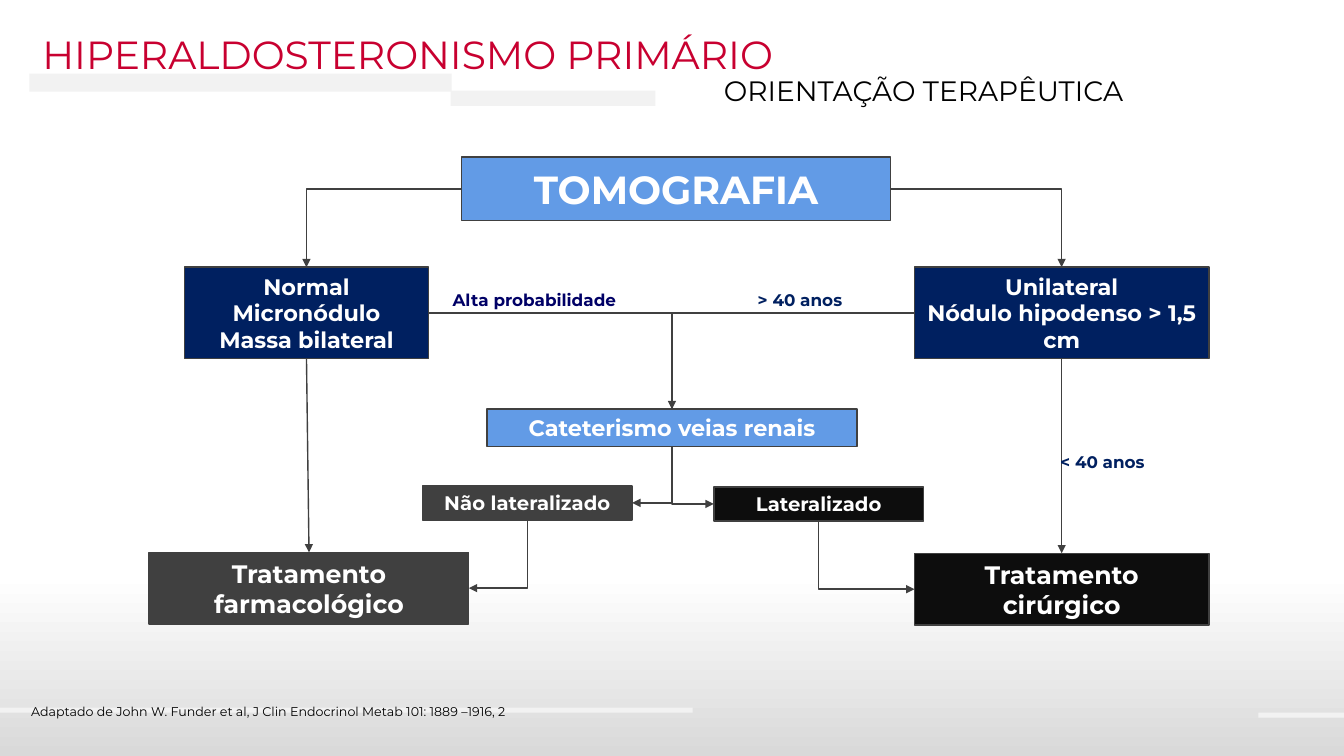
from pptx import Presentation
from pptx.dml.color import RGBColor
from pptx.enum.shapes import MSO_CONNECTOR as Connector, MSO_SHAPE as Shape
from pptx.enum.text import MSO_ANCHOR as Anchor, MSO_AUTO_SIZE as AutoSize, PP_ALIGN as Align
from pptx.oxml.ns import qn
from pptx.util import Inches, Pt
from lxml import etree

COLORS = {
    "white": "FFFFFF", "black": "000000", "crimson": "C80030",
    "light": "F2F2F2", "shade": "D9D9D9", "sky": "629BE6",
    "navy": "002060", "indigo": "000066", "gray": "404040", "ink": "0D0D0D",
}
TOP, LEFT, BOTTOM, RIGHT = range(4)  # connection sites of a rectangle


def color(name):
    return RGBColor.from_string(COLORS[name])


def write(shape, lines, size, font_color, bold=False, align=Align.LEFT, wrap=True):
    frame = shape.text_frame
    frame.text = "\n".join(lines)
    frame.word_wrap = wrap
    frame.auto_size = AutoSize.NONE
    frame.vertical_anchor = Anchor.MIDDLE
    font_format = {"name": "Montserrat", "size": Pt(size), "bold": bold}
    for paragraph in frame.paragraphs:
        paragraph.alignment = align
        paragraph.font.color.rgb = color(font_color)
        for attribute, value in font_format.items():
            setattr(paragraph.font, attribute, value)


presentation = Presentation()
presentation.slide_width, presentation.slide_height = Inches(13.33), Inches(7.5)
slide = presentation.slides.add_slide(presentation.slide_layouts[5])
shapes = slide.shapes

# Background fading to gray at the bottom
background = slide.background.fill
background.gradient()
background.gradient_angle = 270
for stop, (position, name) in zip(background.gradient_stops, [(0.76, "white"), (1, "shade")]):
    stop.position = position
    stop.color.rgb = color(name)

# Decorative bars
for bar_place in [(0.29, 0.73, 4.19, 0.18), (4.47, 0.9, 2.03, 0.15),
                  (0, 7.02, 6.87, 0.05), (12.48, 7.07, 0.85, 0.05)]:
    bar = shapes.add_shape(Shape.RECTANGLE, *map(Inches, bar_place))
    bar.shadow.inherit = False
    bar.fill.solid()
    bar.fill.fore_color.rgb = color("light")
    bar.line.fill.background()

# Title, subtitle and citation
title = shapes.title
title.left, title.top, title.width, title.height = map(Inches, (0.32, 0.25, 11.46, 0.57))
write(title, ["HIPERALDOSTERONISMO PRIMÁRIO"], 28, "crimson")

subtitle = shapes.add_textbox(*map(Inches, (7.08, 0.68, 5.81, 0.44)))
write(subtitle, ["ORIENTAÇÃO TERAPÊUTICA"], 20, "black")

citation = shapes.add_textbox(*map(Inches, (0.21, 6.93, 5.02, 0.25)))
write(citation, ["Adaptado de John W. Funder et al, J Clin Endocrinol Metab 101: 1889 –1916, 2"],
      9, "black", wrap=False)

# Flowchart boxes: place, fill, text size, lines
box_specs = {
    "scan": ((4.58, 1.56, 4.25, 0.63), "sky", 28, ["TOMOGRAFIA"]),
    "bilateral": ((1.83, 2.65, 2.42, 0.91), "navy", 16,
                  ["Normal", "Micronódulo", "Massa bilateral"]),
    "unilateral": ((9.07, 2.65, 2.92, 0.91), "navy", 16,
                   ["Unilateral", "Nódulo hipodenso > 1,5 cm"]),
    "catheter": ((4.83, 4.06, 3.67, 0.37), "sky", 16, ["Cateterismo veias renais"]),
    "not_lateralized": ((4.19, 4.82, 2.08, 0.34), "gray", 14, ["Não lateralizado"]),
    "lateralized": ((7.08, 4.83, 2.08, 0.34), "ink", 14, ["Lateralizado"]),
    "drugs": ((1.48, 5.48, 3.17, 0.71), "gray", 18, ["Tratamento farmacológico"]),
    "surgery": ((9.07, 5.49, 2.92, 0.71), "ink", 18, ["Tratamento cirúrgico"]),
}
boxes = {}
for key, (place, fill, size, lines) in box_specs.items():
    box = boxes[key] = shapes.add_shape(Shape.RECTANGLE, *map(Inches, place))
    box.shadow.inherit = False
    box.fill.solid()
    box.fill.fore_color.rgb = color(fill)
    box.line.color.rgb = color("gray")
    box.line.width = Pt(1)
    write(box, lines, size, "white", bold=True, align=Align.CENTER)

# Connectors: bent ones leave their first box sideways; arrowhead at either end
links = [
    ("scan", LEFT, "bilateral", TOP, "tailEnd"),
    ("scan", RIGHT, "unilateral", TOP, "tailEnd"),
    ("bilateral", RIGHT, "catheter", TOP, None),
    ("unilateral", LEFT, "catheter", TOP, "tailEnd"),
    ("bilateral", BOTTOM, "drugs", TOP, "tailEnd"),
    ("unilateral", BOTTOM, "surgery", TOP, "tailEnd"),
    ("not_lateralized", RIGHT, "catheter", BOTTOM, "headEnd"),
    ("lateralized", LEFT, "catheter", BOTTOM, "headEnd"),
    ("drugs", RIGHT, "not_lateralized", BOTTOM, "headEnd"),
    ("surgery", LEFT, "lateralized", BOTTOM, "headEnd"),
]
for first, first_site, second, second_site, arrow in links:
    bent = first_site in (LEFT, RIGHT)
    connector = shapes.add_connector(Connector.ELBOW if bent else Connector.STRAIGHT, 0, 0, 0, 0)
    connector.begin_connect(boxes[first], first_site)
    connector.end_connect(boxes[second], second_site)
    connector.line.color.rgb = color("gray")
    connector.line.width = Pt(1)
    properties = connector.element.spPr
    if bent:
        properties.find(qn("a:prstGeom")).set("prst", "bentConnector2")
    if arrow:
        etree.SubElement(properties.find(qn("a:ln")), qn(f"a:{arrow}"), type="triangle")
    etree.SubElement(properties, qn("a:effectLst"))

# Labels on the connectors
for text, label_place, label_color in [
    ("Alta probabilidade", (4.24, 2.8, 2.12, 0.34), "indigo"),
    ("> 40 anos", (7.27, 2.8, 1.33, 0.34), "navy"),
    ("< 40 anos", (10.27, 4.41, 1.33, 0.34), "navy"),
]:
    label = shapes.add_textbox(*map(Inches, label_place))
    write(label, [text], 12, label_color, bold=True, align=Align.CENTER)

presentation.save("out.pptx")
